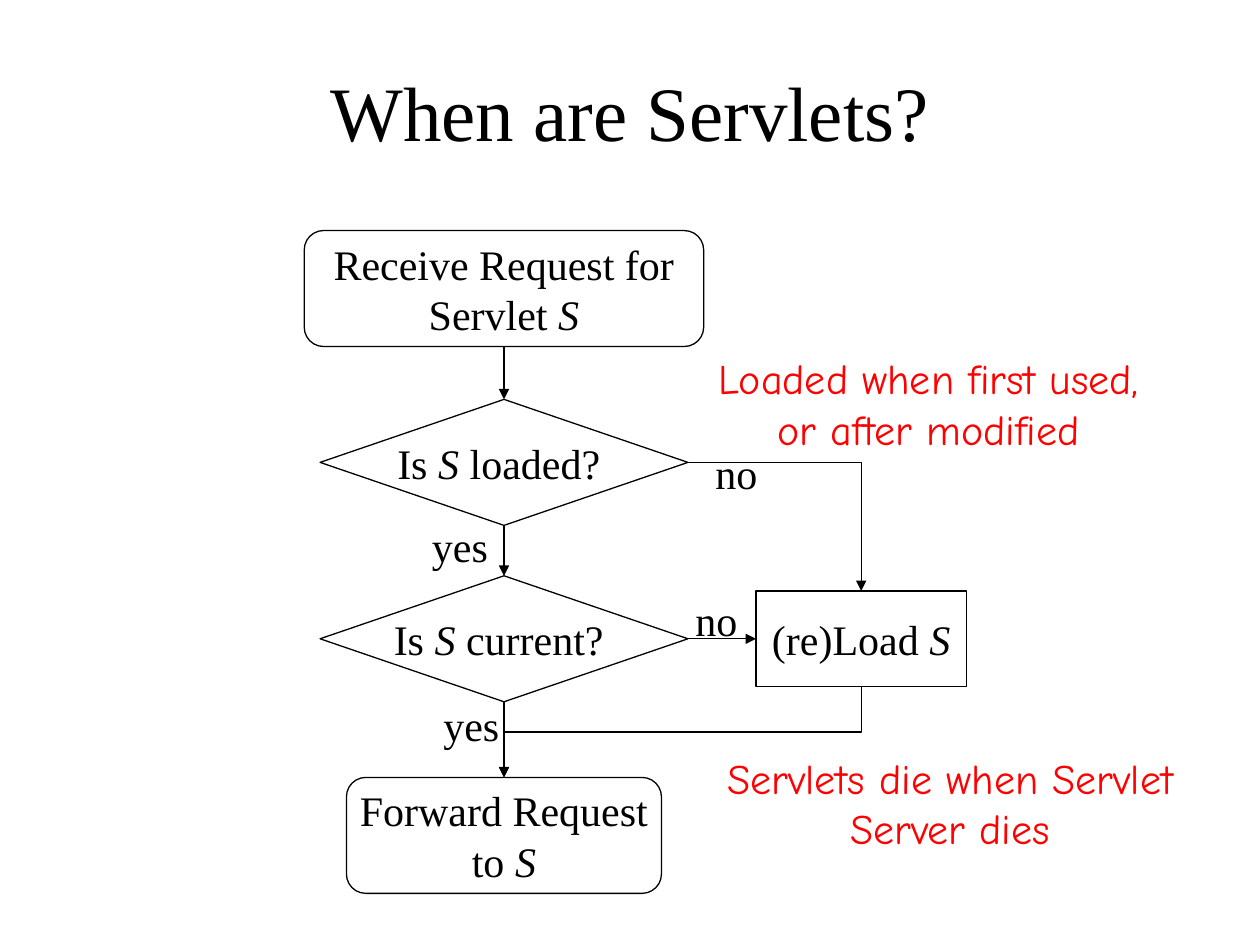
from lxml import etree
from pptx import Presentation, util as u
from pptx.dml.color import RGBColor
from pptx.enum import shapes, text
from pptx.oxml.ns import qn

BLACK = RGBColor(0, 0, 0)
RED = RGBColor(255, 0, 0)
SERIF = "Times New Roman"
HAND = "Comic Neue"
TOP, LEFT, BOTTOM, RIGHT = range(4)
ELBOW = shapes.MSO_CONNECTOR.ELBOW
STRAIGHT = shapes.MSO_CONNECTOR.STRAIGHT


def inches(*values):
    """Convert numbers to lengths."""
    return [u.Inches(v) for v in values]


def write(tf, content, size=24, font=SERIF, color=BLACK,
          align=text.PP_ALIGN.CENTER, anchor=text.MSO_ANCHOR.MIDDLE,
          wrap=False, fit=text.MSO_AUTO_SIZE.NONE):
    """Fill a text frame; asterisks enclose italics and newlines break lines."""
    tf.word_wrap, tf.auto_size, tf.vertical_anchor = wrap, fit, anchor
    p = tf.paragraphs[0]
    p.alignment = align
    for i, part in enumerate(content.split("*")):
        for j, line in enumerate(part.split("\n")):
            if j:
                p.add_line_break()
            if line:
                r = p.add_run()
                r.text = line
                r.font.size, r.font.name = u.Pt(size), font
                r.font.italic = i % 2 == 1
                r.font.color.rgb = color


def add_node(s, kind, box, content):
    """Add an outlined flowchart node and return it."""
    sp = s.shapes.add_shape(kind, *inches(*box))
    sp.shadow.inherit = False
    sp.fill.background()
    sp.line.color.rgb, sp.line.width = BLACK, u.Pt(0.75)
    write(sp.text_frame, content)
    return sp


def add_arrow(s, start, start_side, end, end_side, kind=STRAIGHT):
    """Join two nodes with an arrow and return it."""
    cn = s.shapes.add_connector(kind, 0, 0, 0, 0)
    cn.begin_connect(start, start_side)
    cn.end_connect(end, end_side)
    cn.line.color.rgb, cn.line.width = BLACK, u.Pt(0.75)
    etree.SubElement(cn.line._get_or_add_ln(), qn("a:tailEnd"), type="triangle")
    etree.SubElement(cn._element.spPr, qn("a:effectLst"))
    return cn


def add_label(s, box, content, **fmt):
    """Add a text box that fits its text."""
    sp = s.shapes.add_textbox(*inches(*box))
    write(sp.text_frame, content, anchor=text.MSO_ANCHOR.TOP,
          fit=text.MSO_AUTO_SIZE.SHAPE_TO_FIT_TEXT, **fmt)


def add_title(s, box, content):
    """Place and format the slide title."""
    sp = s.shapes.title
    sp.left, sp.top, sp.width, sp.height = inches(*box)
    write(sp.text_frame, content, size=44, wrap=True)


def add_flowchart(s, left, top):
    """Draw the servlet flowchart from its top left corner."""
    kinds = shapes.MSO_SHAPE
    mid = left + 1.58
    steps = [
        (kinds.FLOWCHART_ALTERNATE_PROCESS, 0, 3.17, 0.92,
         "Receive Request for\nServlet *S*"),
        (kinds.FLOWCHART_DECISION, 1.34, 2.92, 1, "Is *S *loaded? "),
        (kinds.FLOWCHART_DECISION, 2.74, 2.92, 1, "Is *S *current? "),
        (kinds.FLOWCHART_ALTERNATE_PROCESS, 4.34, 2.5, 0.92,
         "Forward Request\nto *S*"),
    ]
    nodes = [add_node(s, kind, (mid - w / 2, top + y, w, h), content)
             for kind, y, w, h, content in steps]
    for start, end in zip(nodes, nodes[1:]):
        add_arrow(s, start, BOTTOM, end, TOP)
    receive, loaded, current, forward = nodes
    load = add_node(s, kinds.FLOWCHART_PROCESS,
                    (left + 3.58, top + 2.86, 1.67, 0.76), "(re)Load *S*")
    add_arrow(s, current, RIGHT, load, LEFT)
    cn = add_arrow(s, loaded, RIGHT, load, TOP, ELBOW)
    cn._element.spPr.find(qn("a:prstGeom")).set("prst", "bentConnector2")

    cn = add_arrow(s, load, BOTTOM, forward, TOP, ELBOW)
    across, down = cn.width, cn.height
    xfrm = cn._element.spPr.find(qn("a:xfrm"))
    xfrm.attrib.clear()
    xfrm.set("rot", "5400000")
    cn.left += (across - down) // 2
    cn.top += (down - across) // 2
    cn.width, cn.height = down, across

    for x, y, w, word in [(3.16, 1.67, 0.53, "no"), (3, 2.84, 0.53, "no"),
                          (0.91, 2.25, 0.65, "yes"), (1, 3.67, 0.65, "yes")]:
        add_label(s, (left + x, top + y, w, 0.5), word, align=text.PP_ALIGN.LEFT)


def add_notes(s):
    """Add the red remarks beside the flowchart."""
    for box, content in [
        ((5.58, 5.92, 3.92, 0.9), "Servlets die when Servlet Server dies"),
        ((5.08, 2.75, 4.58, 0.9), "Loaded when first used,\nor after modified"),
    ]:
        add_label(s, box, content, font=HAND, color=RED, wrap=True)


def main():
    """Build and save the slide."""
    prs = Presentation()
    prs.slide_width, prs.slide_height = inches(10, 7.5)
    s = prs.slides.add_slide(prs.slide_layouts[5])
    add_title(s, (0.75, 0.25, 8.5, 1.25), "When are Servlets?")
    add_flowchart(s, 2.42, 1.83)
    add_notes(s)
    prs.save("out.pptx")


if __name__ == "__main__":
    main()
